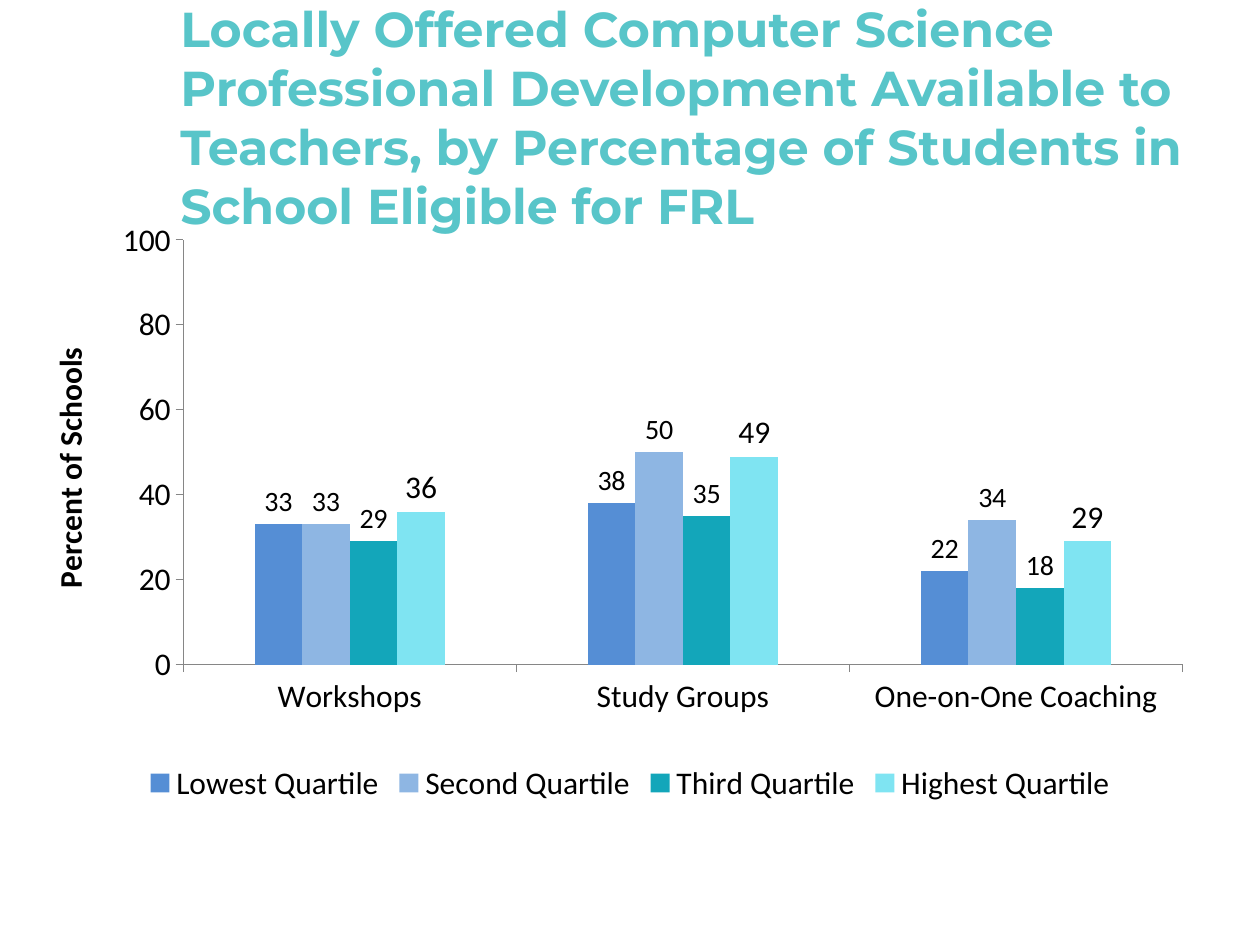
from lxml.etree import SubElement
from pptx import Presentation
from pptx.chart.data import CategoryChartData
from pptx.dml.color import RGBColor
from pptx.enum.chart import XL_CHART_TYPE as ChartType
from pptx.enum.chart import XL_LABEL_POSITION as LabelPosition
from pptx.enum.chart import XL_LEGEND_POSITION as LegendPosition
from pptx.enum.chart import XL_TICK_MARK as TickMark
from pptx.enum.text import MSO_ANCHOR as Anchor
from pptx.oxml.ns import qn
from pptx.util import Inches, Pt

TITLE = ("Locally Offered Computer Science Professional Development Available to "
         "Teachers, by Percentage of Students in School Eligible for FRL")
CATEGORIES = ["Workshops", "Study Groups", "One-on-One Coaching"]
# name, values, bar colour, label size
QUARTILES = [
    ("Lowest Quartile", (33, 38, 22), "558ED5", 16),
    ("Second Quartile", (33, 50, 34), "8EB6E3", 16),
    ("Third Quartile", (29, 35, 18), "13A6BA", 16),
    ("Highest Quartile", (36, 49, 29), "7FE4F2", 18),
]


def color(hex_string):
    return RGBColor.from_string(hex_string)


class SlideBuilder:
    title_font, body_font = "Montserrat", "Calibri"
    title_color, text_color, axis_color = "58C5C9", "000000", "868686"
    title_size, body_size = 28, 18

    def __init__(self, presentation):
        self.slide = presentation.slides.add_slide(presentation.slide_layouts[6])
        self.width = presentation.slide_width
        self.height = presentation.slide_height

    def box(self, left, top, width, height):
        """Turn shares of the slide's size into lengths."""
        return (round(left * self.width), round(top * self.height),
                round(width * self.width), round(height * self.height))

    def style(self, font, size, name=None, hex_string=None, bold=False):
        font.size, font.bold = Pt(size), bold
        font.name = name or self.body_font
        font.color.rgb = color(hex_string or self.text_color)

    def add_title(self, text, *shares):
        frame = self.slide.shapes.add_textbox(*self.box(*shares)).text_frame
        frame.word_wrap = True
        frame.vertical_anchor = Anchor.MIDDLE
        paragraph = frame.paragraphs[0]
        paragraph.text = text
        self.style(paragraph.font, self.title_size, self.title_font,
                   self.title_color, bold=True)

    def add_column_chart(self, categories, series_rows, value_title, plot_shares, *shares):
        data = CategoryChartData()
        data.categories = categories
        for name, values, *_ in series_rows:
            data.add_series(name, values)
        chart = self.slide.shapes.add_chart(
            ChartType.COLUMN_CLUSTERED, *self.box(*shares), data).chart
        self.style(chart.font, self.body_size)
        chart.has_title = False
        chart.has_legend = True
        chart.legend.position = LegendPosition.BOTTOM
        chart.legend.include_in_layout = False

        plot = chart.plots[0]
        plot.gap_width, plot.overlap = 300, 0
        plot.vary_by_categories = False
        for series, (_, _, fill, label_size) in zip(plot.series, series_rows):
            self.style_series(series, fill, label_size)
        self.style_axes(chart, value_title)
        self.place_plot(chart, *plot_shares)

    def style_series(self, series, fill, label_size):
        series.format.fill.solid()
        series.format.fill.fore_color.rgb = color(fill)
        labels = series.data_labels
        labels.show_value = True
        labels.position = LabelPosition.OUTSIDE_END
        self.style(labels.font, label_size)

    def style_axes(self, chart, value_title):
        for axis in (chart.category_axis, chart.value_axis):
            axis.has_major_gridlines = False
            axis.major_tick_mark = TickMark.OUTSIDE
            axis.minor_tick_mark = TickMark.NONE
            axis.format.line.color.rgb = color(self.axis_color)
            axis.format.line.width = Pt(0.75)
        axis = chart.value_axis
        axis.minimum_scale, axis.maximum_scale, axis.major_unit = 0, 100, 20
        paragraph = axis.axis_title.text_frame.paragraphs[0]
        paragraph.text = value_title
        self.style(paragraph.font, self.body_size, bold=True)

    def place_plot(self, chart, left, top, width, height):
        """Fix the inner plot area, given as shares of the chart's size."""
        area = chart.element.find(".//" + qn("c:plotArea"))
        layout = area.find(qn("c:layout"))
        if layout is None:
            layout = SubElement(area, qn("c:layout"))
            area.insert(0, layout)
        manual = SubElement(layout, qn("c:manualLayout"))
        settings = [("layoutTarget", "inner"), ("xMode", "edge"), ("yMode", "edge"),
                    ("x", left), ("y", top), ("w", width), ("h", height)]
        for tag, value in settings:
            SubElement(manual, qn("c:" + tag)).set("val", str(value))


def main():
    presentation = Presentation()
    presentation.slide_width, presentation.slide_height = Inches(10), Inches(7.5)
    builder = SlideBuilder(presentation)
    builder.add_column_chart(CATEGORIES, QUARTILES, "Percent of Schools",
                             (0.12, 0.05, 0.85, 0.71), 1 / 30, 2 / 9, 14 / 15, 19 / 30)
    builder.add_title(TITLE, 2 / 15, 0.04, 49 / 60, 1 / 6)
    presentation.save("out.pptx")


if __name__ == "__main__":
    main()
